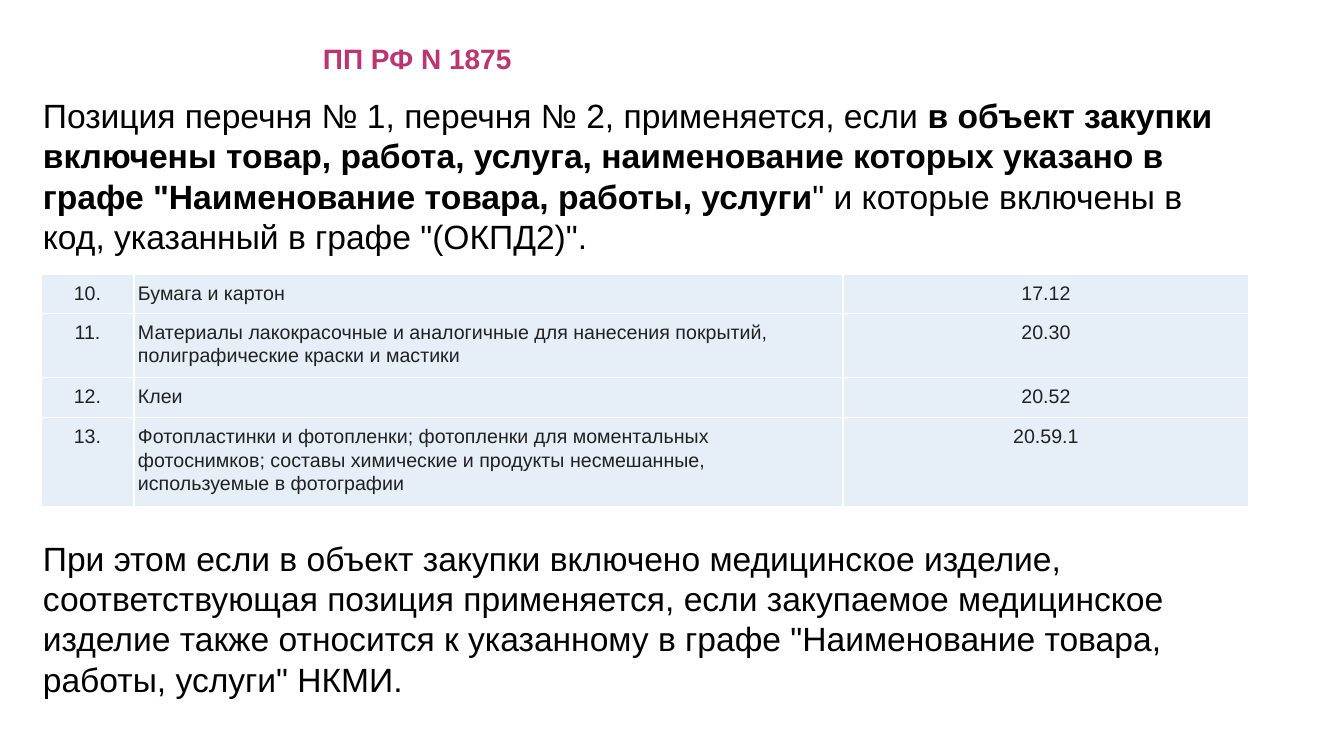
from lxml import etree
from pptx import Presentation
from pptx.dml.color import RGBColor
from pptx.enum.text import MSO_AUTO_SIZE, PP_ALIGN
from pptx.oxml.ns import qn
from pptx.util import Pt

LEFT, CENTER = PP_ALIGN.LEFT, PP_ALIGN.CENTER
GROW = MSO_AUTO_SIZE.SHAPE_TO_FIT_TEXT
EMU_PER_PX = 914400 / 100.8
FONT = "Arial"
COLORS = {"title": "BC3472", "body": "000000", "cell_text": "212121",
          "cell": "E6EFF8", "border": "FFFFFF"}

TITLE = "ПП РФ N 1875"
# Each paragraph is a list of (text, bold) runs
RULES = [
    [("Позиция перечня № 1, перечня № 2, применяется, если ", False),
     ("в объект закупки включены товар, работа, услуга, наименование которых "
      "указано в графе \"Наименование товара, работы, услуги", True),
     ("\" и которые включены в код, указанный в графе \"(ОКПД2)\".", False)],
    [("При этом если в объект закупки включено медицинское изделие, "
      "соответствующая позиция применяется, если закупаемое медицинское изделие "
      "также относится к указанному в графе \"Наименование товара, работы, "
      "услуги\" НКМИ.", False)],
]
GOODS = [
    ("10.", "Бумага и картон", "17.12"),
    ("11.", "Материалы лакокрасочные и аналогичные для нанесения покрытий, "
            "полиграфические краски и мастики", "20.30"),
    ("12.", "Клеи", "20.52"),
    ("13.", "Фотопластинки и фотопленки; фотопленки для моментальных "
            "фотоснимков; составы химические и продукты несмешанные, "
            "используемые в фотографии", "20.59.1"),
]
COL_WIDTHS = (93, 709, 406)
ROW_HEIGHTS = (38, 64, 40, 89)
ALIGNS = (CENTER, LEFT, CENTER)


def px(n):
    return round(n * EMU_PER_PX)


def set_attrs(obj, values):
    for name, value in values.items():
        setattr(obj, name, value)


def add_run(p, text, size, color, bold=False):
    r = p.add_run()
    r.text = text
    set_attrs(r.font, {"name": FONT, "size": Pt(size), "bold": bold})
    r.font.color.rgb = RGBColor.from_string(COLORS[color])


def add_text(s, box, paragraphs, size, color, gap=0):
    tf = s.shapes.add_textbox(*map(px, box)).text_frame
    set_attrs(tf, {"word_wrap": True, "auto_size": GROW})
    for i, runs in enumerate(paragraphs):
        p = tf.add_paragraph() if i else tf.paragraphs[0]
        if i:
            p.space_before = Pt(gap)
        for text, bold in runs:
            add_run(p, text, size, color, bold)


def add_borders(cell):
    tcPr = cell._tc.get_or_add_tcPr()
    for i, side in enumerate(("a:lnL", "a:lnR", "a:lnT", "a:lnB")):
        ln = etree.Element(qn(side), w=str(Pt(1)))
        fill = etree.SubElement(ln, qn("a:solidFill"))
        etree.SubElement(fill, qn("a:srgbClr"), val=COLORS["border"])
        tcPr.insert(i, ln)


def add_goods_table(s, box):
    table = s.shapes.add_table(len(GOODS), len(COL_WIDTHS), *map(px, box)).table
    set_attrs(table, {"first_row": False, "horz_banding": False})
    for col, width in zip(table.columns, COL_WIDTHS):
        col.width = px(width)
    for row, height, values in zip(table.rows, ROW_HEIGHTS, GOODS):
        row.height = px(height)
        for cell, text, align in zip(row.cells, values, ALIGNS):
            set_attrs(cell, {"margin_left": px(4), "margin_right": px(4),
                             "margin_top": px(7), "margin_bottom": px(7)})
            cell.fill.solid()
            cell.fill.fore_color.rgb = RGBColor.from_string(COLORS["cell"])
            add_borders(cell)
            p = cell.text_frame.paragraphs[0]
            set_attrs(p, {"alignment": align, "line_spacing": 1.07})
            add_run(p, text, 14, "cell_text")


def main():
    prs = Presentation()
    set_attrs(prs, {"slide_width": px(1344), "slide_height": px(756)})
    s = prs.slides.add_slide(prs.slide_layouts[6])
    # Rules above and below the table
    add_text(s, (33, 90, 1223, 596), RULES, 24, "body", gap=201)
    # Goods with their codes
    add_goods_table(s, (41, 274, sum(COL_WIDTHS), sum(ROW_HEIGHTS)))
    # Title
    add_text(s, (313, 37, 226, 42), [[(TITLE, True)]], 20, "title")
    prs.save("out.pptx")


if __name__ == "__main__":
    main()
